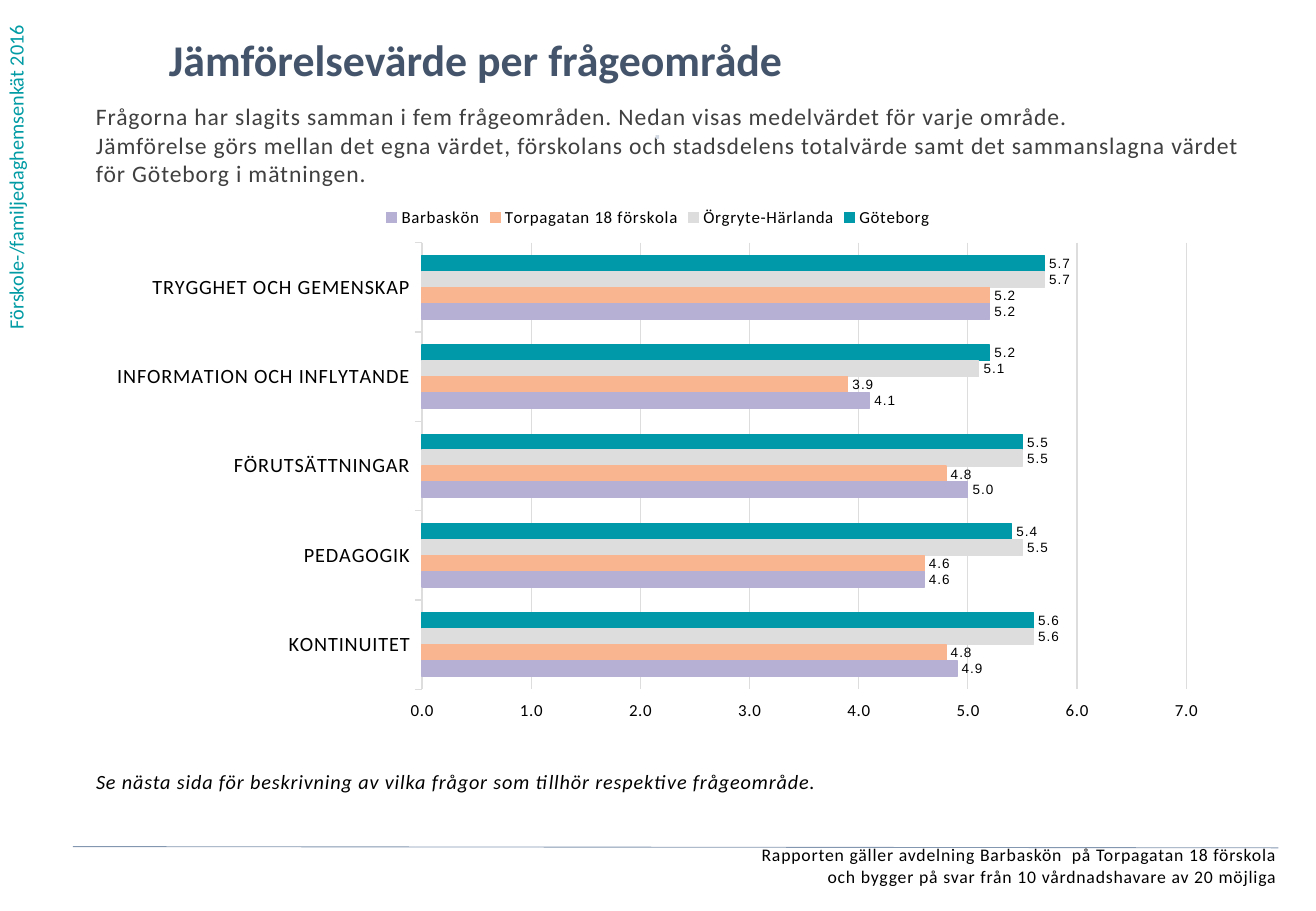
from dataclasses import dataclass, field

from lxml.etree import SubElement
from pptx import Presentation
from pptx.chart.chart import Chart
from pptx.chart.data import CategoryChartData
from pptx.dml.color import RGBColor
from pptx.enum.chart import XL_CHART_TYPE as ChartType
from pptx.enum.chart import XL_LABEL_POSITION as LabelPosition
from pptx.enum.chart import XL_LEGEND_POSITION as LegendPosition
from pptx.enum.chart import XL_TICK_LABEL_POSITION as TickLabelPosition
from pptx.enum.chart import XL_TICK_MARK as TickMark
from pptx.enum.shapes import MSO_CONNECTOR as Connector
from pptx.enum.text import PP_ALIGN as Align
from pptx.oxml import parse_xml
from pptx.oxml.ns import nsdecls, qn
from pptx.slide import Slide
from pptx.text.text import Font
from pptx.util import Inches, Pt

TEAL = RGBColor(0x00, 0x99, 0xAA)
SIDE_TEAL = RGBColor(0x00, 0x9B, 0xA4)
GREY = RGBColor(0xDD, 0xDD, 0xDD)
PEACH = RGBColor(0xF9, 0xB5, 0x90)
LILAC = RGBColor(0xB6, 0xB1, 0xD4)
NAVY = RGBColor(0x44, 0x54, 0x6A)
DARK = RGBColor(0x40, 0x40, 0x40)
PALE = RGBColor(0xD2, 0xD9, 0xE2)
RULE = RGBColor(0x84, 0x97, 0xB0)
BLACK = RGBColor(0, 0, 0)

NUMBER_FORMAT = "0.0;0.0"
SPACING = 0.5
AREAS = ["TRYGGHET OCH GEMENSKAP", "INFORMATION OCH INFLYTANDE",
         "FÖRUTSÄTTNINGAR", "PEDAGOGIK", "KONTINUITET"]


@dataclass
class Passage:
    text: str
    box: tuple[float, float, float, float]
    size: float
    color: RGBColor = BLACK
    spacing: float = SPACING
    align: Align = Align.LEFT
    style: dict[str, bool] = field(default_factory=dict)
    sideways: bool = False


@dataclass
class Group:
    name: str
    values: list[float]
    color: RGBColor


PASSAGES = [
    Passage("Förskole-/familjedaghemsenkät 2016", (-0.02, 0, 0.4, 2.81), 12,
            SIDE_TEAL, 0, sideways=True),
    Passage("Jämförelsevärde per frågeområde", (1.39, 0.27, 8.34, 0.57), 26,
            NAVY, 0, style={"bold": True}),
    Passage("Frågorna har slagits samman i fem frågeområden. Nedan visas medelvärdet "
            "för varje område.\nJämförelse görs mellan det egna värdet, förskolans och "
            "stadsdelens totalvärde samt det sammanslagna värdet för Göteborg i mätningen.",
            (0.79, 0.84, 9.46, 0.72), 14, DARK),
    Passage("Rapporten gäller avdelning Barbaskön  på Torpagatan 18 förskola\n"
            "och bygger på svar från 10 vårdnadshavare av 20 möjliga",
            (0.11, 6.95, 10.4, 0.43), 10.5, align=Align.RIGHT),
    Passage("⋅", (3.87, 1.02, 3.08, 0.39), 12, PALE, align=Align.CENTER,
            style={"bold": True}),
    Passage("Se nästa sida för beskrivning av vilka frågor som tillhör respektive "
            "frågeområde.", (0.79, 6.33, 9.25, 0.3), 12, style={"italic": True}),
]

GROUPS = [
    Group("Göteborg", [5.7, 5.2, 5.5, 5.4, 5.6], TEAL),
    Group("Örgryte-Härlanda", [5.7, 5.1, 5.5, 5.5, 5.6], GREY),
    Group("Torpagatan 18 förskola", [5.2, 3.9, 4.8, 4.6, 4.8], PEACH),
    Group("Barbaskön", [5.2, 4.1, 5.0, 4.6, 4.9], LILAC),
]


def apply(target: object, values: dict[str, object]) -> None:
    for name, value in values.items():
        setattr(target, name, value)


def format_font(font: Font, size: float, color: RGBColor = BLACK,
                name: str = "Calibri", spacing: float = SPACING, **style: bool) -> None:
    apply(font, {"name": name, "size": Pt(size), **style})
    font.color.rgb = color
    if spacing:
        font._rPr.set("spc", str(int(spacing * 100)))


def add_passage(slide: Slide, passage: Passage) -> None:
    frame = slide.shapes.add_textbox(*map(Inches, passage.box)).text_frame
    frame.word_wrap = True
    if passage.sideways:
        frame._txBody.bodyPr.set("vert", "vert270")
    else:
        apply(frame, dict.fromkeys(
            ["margin_left", "margin_right", "margin_top", "margin_bottom"], 0))
    frame.text = passage.text
    for paragraph in frame.paragraphs:
        paragraph.alignment = passage.align
        for run in paragraph.runs:
            format_font(run.font, passage.size, passage.color,
                        spacing=passage.spacing, **passage.style)


def format_axes(chart: Chart) -> None:
    areas, scale = chart.category_axis, chart.value_axis
    apply(areas, {"reverse_order": True, "major_tick_mark": TickMark.OUTSIDE,
                  "minor_tick_mark": TickMark.NONE})
    apply(scale, {"minimum_scale": 0, "maximum_scale": 7, "major_unit": 1,
                  "has_major_gridlines": True, "major_tick_mark": TickMark.OUTSIDE,
                  "minor_tick_mark": TickMark.NONE,
                  "tick_label_position": TickLabelPosition.HIGH})
    apply(scale.tick_labels, {"number_format": NUMBER_FORMAT,
                              "number_format_is_linked": False})
    format_font(areas.tick_labels.font, 12)
    format_font(scale.tick_labels.font, 10)
    for line in (areas.format.line, scale.major_gridlines.format.line):
        line.color.rgb = GREY
        line.width = Pt(0.75)
    scale.format.line.fill.background()


def place_plot(chart: Chart, **extent: float) -> None:
    plot_area = chart._chartSpace.chart.plotArea
    for layout in plot_area.findall(qn("c:layout")):
        plot_area.remove(layout)
    layout = parse_xml(f"<c:layout {nsdecls('c')}/>")
    manual = SubElement(layout, qn("c:manualLayout"))
    settings = {"layoutTarget": "inner", "xMode": "edge", "yMode": "edge", **extent}
    for name, value in settings.items():
        SubElement(manual, qn(f"c:{name}")).set("val", str(value))
    plot_area.insert(0, layout)


def add_comparison(slide: Slide) -> None:
    data = CategoryChartData(number_format="0.0")
    data.categories = AREAS
    for group in GROUPS:
        data.add_series(group.name, group.values)
    box = map(Inches, (0.79, 1.6, 9.25, 4.43))
    chart = slide.shapes.add_chart(ChartType.BAR_CLUSTERED, *box, data).chart
    apply(chart, {"has_title": False, "has_legend": True})
    format_font(chart.font, 10)
    apply(chart.legend, {"position": LegendPosition.TOP, "include_in_layout": False})
    format_font(chart.legend.font, 10)
    format_axes(chart)
    place_plot(chart, x=0.29, y=0.09, w=0.68, h=0.83)
    plot = chart.plots[0]
    apply(plot, {"gap_width": 162, "overlap": 0, "vary_by_categories": False})
    for series, group in zip(plot.series, GROUPS):
        series.format.fill.solid()
        series.format.fill.fore_color.rgb = group.color
        series.format.line.color.rgb = group.color
        series.format.line.width = Pt(0.75)
        labels = series.data_labels
        apply(labels, {"show_value": True, "number_format": NUMBER_FORMAT,
                       "number_format_is_linked": False,
                       "position": LabelPosition.OUTSIDE_END})
        format_font(labels.font, 8, name="Arial")


def add_footer_rule(slide: Slide) -> None:
    ends = map(Inches, (0.6, 6.97, 10.52, 6.98))
    rule = slide.shapes.add_connector(Connector.STRAIGHT, *ends)
    rule.line.color.rgb = RULE
    rule.line.width = Pt(0.5)
    SubElement(rule._element.spPr, qn("a:effectLst"))


def main() -> None:
    deck = Presentation()
    apply(deck, {"slide_width": Inches(10.83), "slide_height": Inches(7.5)})
    slide = deck.slides.add_slide(deck.slide_layouts[6])
    for passage in PASSAGES:
        add_passage(slide, passage)
    add_comparison(slide)
    add_footer_rule(slide)
    deck.save("out.pptx")


if __name__ == "__main__":
    main()
